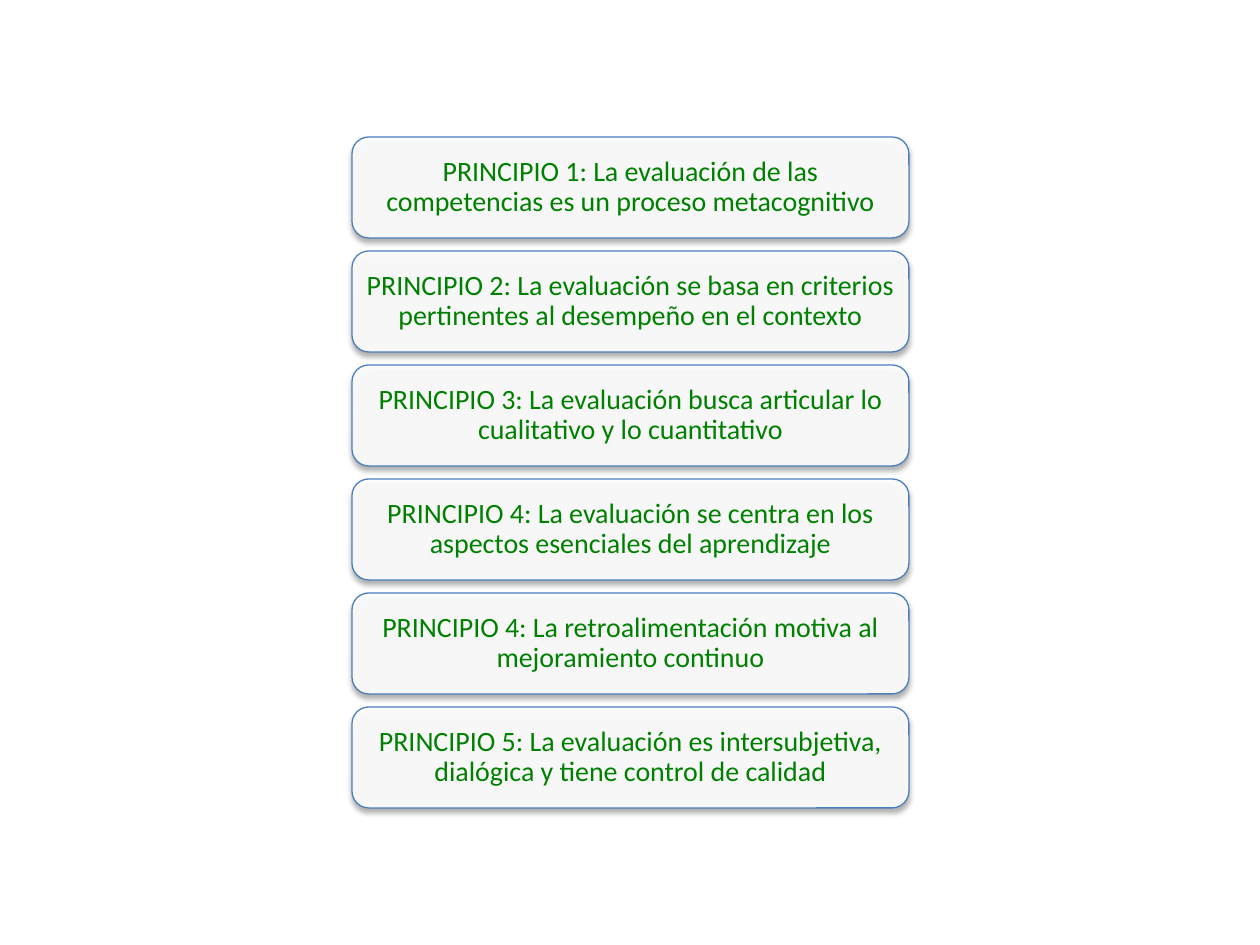
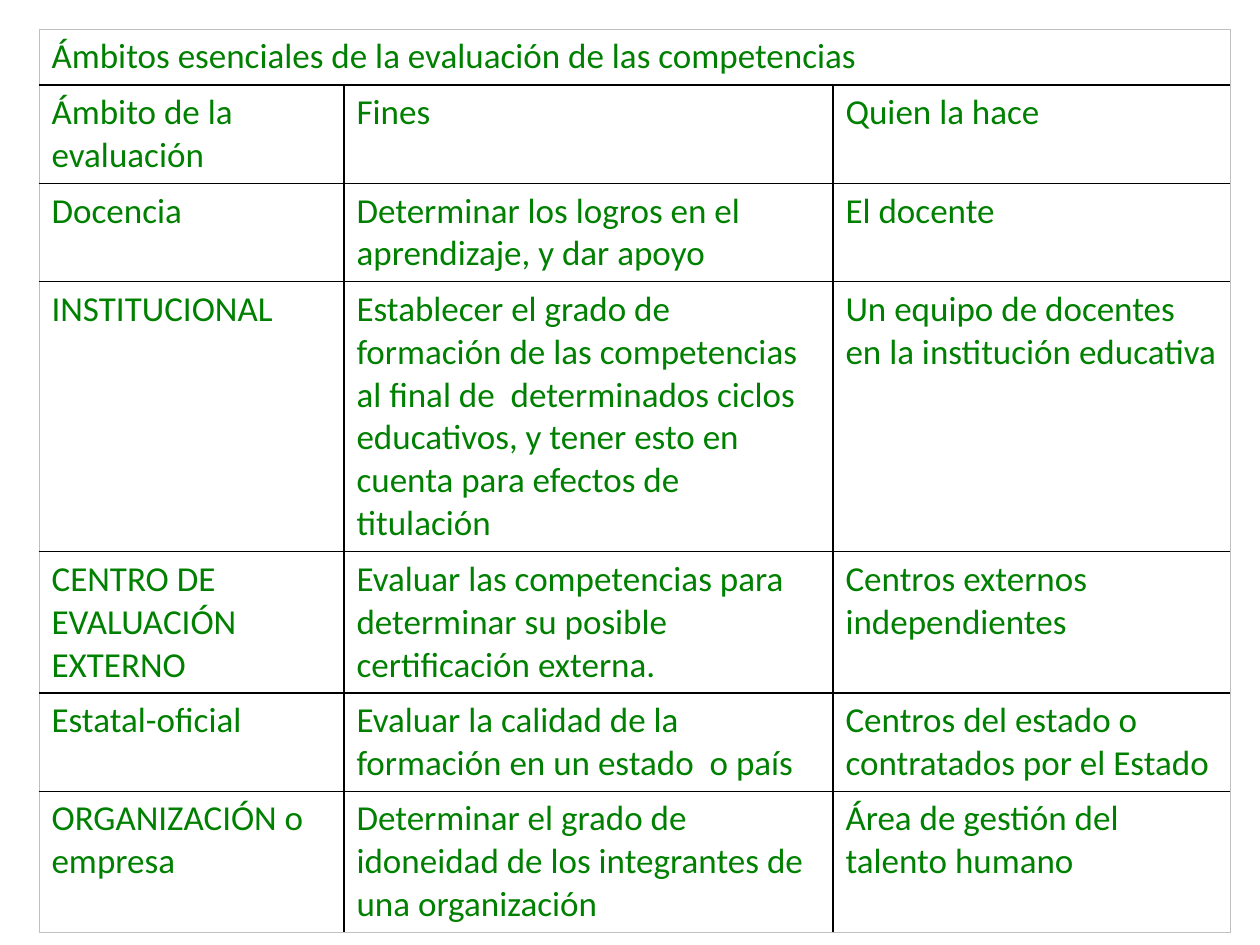
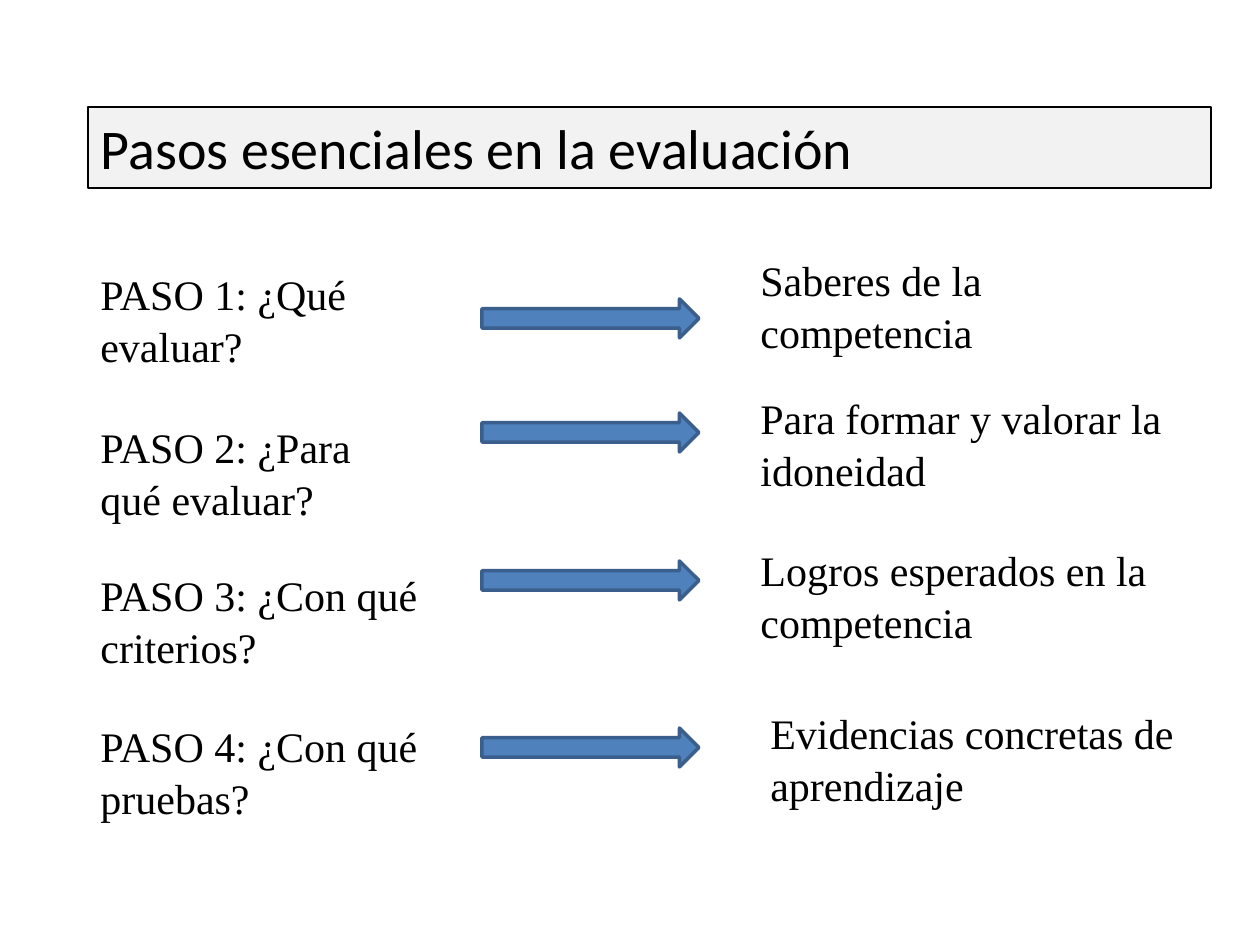
from lxml import etree
from pptx import Presentation
from pptx import util as u
from pptx.dml.color import RGBColor
from pptx.enum import shapes, text
from pptx.oxml import ns

SCALE = 914400 / 126
GREEN, BLACK, WHITE, GREY = "008000", "000000", "FFFFFF", "C0C0C0"
BAND_FILL, CARD_LINE, ARROW_FILL, ARROW_LINE = "F2F2F2", "4B7EBC", "4F81BD", "3A5F8C"


def paint(target, color):
    if hasattr(target, "solid"):
        target.solid()
        target = target.fore_color
    target.rgb = RGBColor.from_string(color)


def write(frame, words, size, font, color):
    frame.word_wrap = True
    para = frame.paragraphs[0]
    span = para.add_run()
    span.text = words
    span.font.size = u.Pt(size)
    span.font.name = font
    paint(span.font.color, color)
    return para


deck = Presentation()
deck.slide_width, deck.slide_height = u.Inches(10), u.Inches(7.5)
title_only, blank = deck.slide_layouts[5], deck.slide_layouts[6]

page = deck.slides.add_slide(blank)
principles = [
    "PRINCIPIO 1: La evaluación de las competencias es un proceso metacognitivo",
    "PRINCIPIO 2: La evaluación se basa en criterios pertinentes al desempeño en el contexto",
    "PRINCIPIO 3: La evaluación busca articular lo cualitativo y lo cuantitativo",
    "PRINCIPIO 4: La evaluación se centra en los aspectos esenciales del aprendizaje",
    "PRINCIPIO 4: La retroalimentación motiva al mejoramiento continuo",
    "PRINCIPIO 5: La evaluación es intersubjetiva, dialógica y tiene control de calidad",
]
for index, words in enumerate(principles):
    place = [int(n * SCALE) for n in (352, 137 + index * 114, 557, 101)]
    card = page.shapes.add_shape(shapes.MSO_SHAPE.ROUNDED_RECTANGLE, *place)
    paint(card.fill, WHITE)
    fill_color = card.fill._xPr.find(ns.qn("a:solidFill"))[0]
    etree.SubElement(fill_color, ns.qn("a:alpha"), val="90000")
    paint(card.line.fill, CARD_LINE)
    card.line.width = u.Pt(0.75)
    card.shadow.inherit = False
    effects = card._element.spPr.find(ns.qn("a:effectLst"))
    shadow = etree.SubElement(effects, ns.qn("a:outerShdw"), blurRad=str(u.Pt(3.1)),
                              dist=str(u.Pt(1.8)), dir="5400000", rotWithShape="0")
    shadow_color = etree.SubElement(shadow, ns.qn("a:srgbClr"), val=BLACK)
    etree.SubElement(shadow_color, ns.qn("a:alpha"), val="35000")
    frame = card.text_frame
    frame.margin_left = frame.margin_right = u.Inches(0.07)
    frame.margin_top = frame.margin_bottom = u.Inches(0.07)
    frame.vertical_anchor = text.MSO_ANCHOR.MIDDLE
    para = write(frame, words, 16, "Calibri", GREEN)
    para.alignment = text.PP_ALIGN.CENTER
    para.line_spacing = 0.9

page = deck.slides.add_slide(blank)
scopes = [
    ["Ámbitos esenciales de la evaluación de las competencias"],
    ["Ámbito de la  evaluación", "Fines", "Quien la hace"],
    ["Docencia", "Determinar los logros en el aprendizaje, y dar apoyo", "El docente"],
    ["INSTITUCIONAL",
     "Establecer el grado de formación de las competencias al final de  determinados ciclos "
     "educativos, y tener esto en cuenta para efectos de titulación",
     "Un equipo de docentes en la institución educativa"],
    ["CENTRO DE EVALUACIÓN EXTERNO",
     "Evaluar las competencias para determinar su posible certificación externa.",
     "Centros externos independientes"],
    ["Estatal-oficial", "Evaluar la calidad de la formación en un estado  o país",
     "Centros del estado o contratados por el Estado"],
    ["ORGANIZACIÓN o empresa",
     "Determinar el grado de idoneidad de los integrantes de una organización",
     "Área de gestión del talento humano"],
]
widths = [305, 489, 397]
heights = [56, 98, 98, 270, 141, 98, 141]
place = [int(n * SCALE) for n in (39, 29, sum(widths), sum(heights))]
table = page.shapes.add_table(len(heights), len(widths), *place).table
table.first_row = table.horz_banding = False
for column, width in zip(table.columns, widths):
    column.width = int(width * SCALE)
for row, height in zip(table.rows, heights):
    row.height = int(height * SCALE)
table.cell(0, 0).merge(table.cell(0, 2))
for row in range(len(heights)):
    for column in range(len(widths)):
        cell = table.cell(row, column)
        outer = {
            "a:lnL": row == 0 or column == 0,
            "a:lnR": row == 0 or column == len(widths) - 1,
            "a:lnT": row == 0,
            "a:lnB": row == len(heights) - 1,
        }
        for side, is_outer in outer.items():
            border = etree.SubElement(cell._tc.get_or_add_tcPr(), ns.qn(side),
                                      w=str(u.Pt(0.5 if is_outer else 1)))
            solid = etree.SubElement(border, ns.qn("a:solidFill"))
            etree.SubElement(solid, ns.qn("a:srgbClr"), val=GREY if is_outer else BLACK)
        cell.fill.background()
        if column < len(scopes[row]):
            write(cell.text_frame, scopes[row][column], 20, "Calibri", GREEN)

page = deck.slides.add_slide(title_only)
title = page.shapes.title
title.left, title.top, title.width, title.height = [int(n * SCALE) for n in (88, 107, 1123, 81)]
paint(title.fill, BAND_FILL)
paint(title.line.fill, BLACK)
title.line.width = u.Pt(0.75)
title.text_frame.auto_size = text.MSO_AUTO_SIZE.NONE
title.text_frame.vertical_anchor = text.MSO_ANCHOR.TOP
para = write(title.text_frame, "Pasos esenciales en la evaluación", 32, "Calibri", BLACK)
para.alignment = text.PP_ALIGN.LEFT

steps = [
    (("PASO 1: ¿Qué evaluar?", 88, 260, 364), 299,
     ("Saberes de la competencia", 748, 246, 462)),
    (("PASO 2: ¿Para qué evaluar?", 88, 413, 295), 413,
     ("Para formar y valorar la idoneidad", 748, 384, 433)),
    (("PASO 3: ¿Con qué criterios?", 88, 561, 344), 561,
     ("Logros esperados en la competencia", 748, 536, 423)),
    (("PASO 4: ¿Con qué pruebas?", 88, 712, 344), 728,
     ("Evidencias concretas de aprendizaje", 758, 699, 444)),
]
for question, arrow_top, answer in steps:
    for words, left, top, width in (question, answer):
        place = [int(n * SCALE) for n in (left, top, width, 115)]
        box = page.shapes.add_textbox(*place)
        para = write(box.text_frame, words, 24, "Times New Roman", BLACK)
        para.line_spacing = 1.04
    place = [int(n * SCALE) for n in (482, arrow_top, 217, 39)]
    arrow = page.shapes.add_shape(shapes.MSO_SHAPE.RIGHT_ARROW, *place)
    paint(arrow.fill, ARROW_FILL)
    paint(arrow.line.fill, ARROW_LINE)
    arrow.line.width = u.Pt(2)
    arrow.shadow.inherit = False

deck.save("out.pptx")
